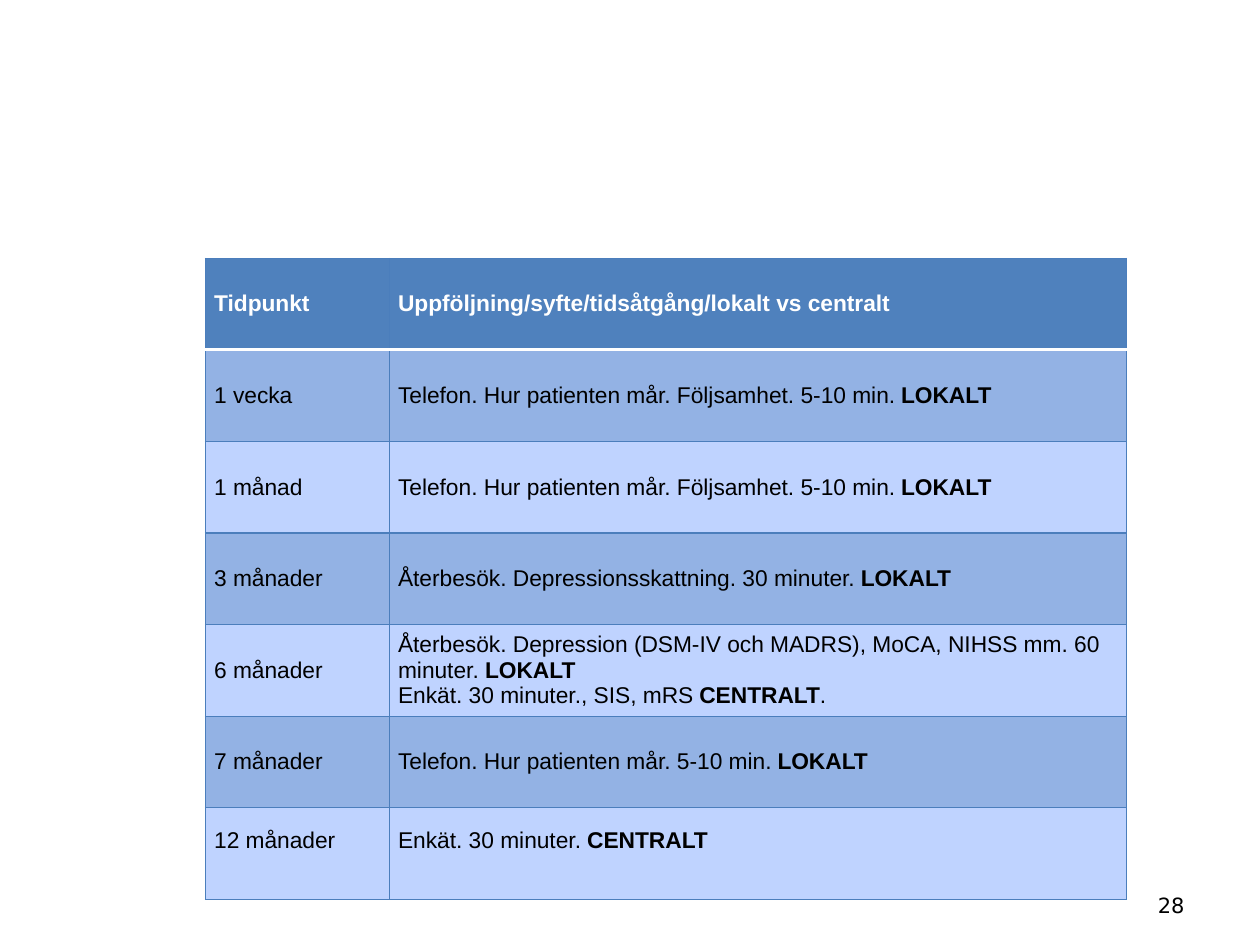
from lxml import etree
from pptx import Presentation
from pptx.dml.color import RGBColor
from pptx.enum.text import MSO_ANCHOR, PP_ALIGN
from pptx.oxml.ns import qn
from pptx.util import Inches, Pt

MIDDLE, BOTTOM = MSO_ANCHOR.MIDDLE, MSO_ANCHOR.BOTTOM
RIGHT = PP_ALIGN.RIGHT
BLANK_LAYOUT = 6

COLORS = {
    "header": "4F81BD",
    "dark": "93B2E4",
    "light": "BFD3FF",
    "border": "4B7EBC",
    "white": "FFFFFF",
    "black": "000000",
}

# Text between asterisks is bold; a newline is a line break in the cell.
ROWS = [
    ("*Tidpunkt*", "*Uppföljning/syfte/tidsåtgång/lokalt vs centralt*"),
    ("1 vecka", "Telefon. Hur patienten mår. Följsamhet. 5-10 min. *LOKALT*"),
    ("1 månad", "Telefon. Hur patienten mår. Följsamhet. 5-10 min. *LOKALT*"),
    ("3 månader", "Återbesök. Depressionsskattning. 30 minuter. *LOKALT*"),
    ("6 månader", "Återbesök. Depression (DSM-IV och MADRS), MoCA, NIHSS mm. "
                  "60 minuter. *LOKALT*\n"
                  "Enkät. 30 minuter., SIS, mRS *CENTRALT*."),
    ("7 månader", "Telefon. Hur patienten mår. 5-10 min. *LOKALT*"),
    ("12 månader", "Enkät. 30 minuter. *CENTRALT*"),
]
COLUMN_WIDTHS = [1.46, 5.85]
TABLE_HEIGHT = 5.09
CELL_FORMAT = {
    "vertical_anchor": MIDDLE,
    "margin_left": Inches(0.07),
    "margin_right": Inches(0.07),
    "margin_top": Inches(0.04),
    "margin_bottom": Inches(0.04),
}


def add_border(cell, side, color, width):
    """Draw one side (L, R, T or B) of a cell; call in that order, before the fill."""
    line = etree.SubElement(cell._tc.get_or_add_tcPr(), qn(f"a:ln{side}"), w=str(Pt(width)))
    fill = etree.SubElement(line, qn("a:solidFill"))
    etree.SubElement(fill, qn("a:srgbClr"), val=color)


def add_text(paragraph, text, font_name, size, color):
    """Add runs, bold between asterisks, with line breaks at newlines."""
    for line_index, line in enumerate(text.split("\n")):
        if line_index:
            paragraph.add_line_break()
        for part_index, part in enumerate(line.split("*")):
            if part:
                run = paragraph.add_run()
                run.text = part
                run.font.name = font_name
                run.font.size = Pt(size)
                run.font.bold = part_index % 2 == 1
                run.font.color.rgb = RGBColor.from_string(color)


presentation = Presentation()
presentation.slide_width = Inches(10)
presentation.slide_height = Inches(7.5)
slide = presentation.slides.add_slide(presentation.slide_layouts[BLANK_LAYOUT])

# Follow-up table
table = slide.shapes.add_table(
    len(ROWS), len(COLUMN_WIDTHS), Inches(1.63), Inches(2.05),
    Inches(sum(COLUMN_WIDTHS)), Inches(TABLE_HEIGHT)).table
for column, width in zip(table.columns, COLUMN_WIDTHS):
    column.width = Inches(width)

for row_index, texts in enumerate(ROWS):
    table.rows[row_index].height = Inches(TABLE_HEIGHT / len(ROWS))
    is_header = row_index == 0
    band = "header" if is_header else "dark" if row_index % 2 else "light"
    for column_index, text in enumerate(texts):
        cell = table.cell(row_index, column_index)
        for name, value in CELL_FORMAT.items():
            setattr(cell, name, value)
        for side in "LRTB":
            under_header = (row_index, side) in [(0, "B"), (1, "T")]
            add_border(cell, side, COLORS["white" if under_header else "border"],
                       2 if under_header else 0.75)
        cell.fill.solid()
        cell.fill.fore_color.rgb = RGBColor.from_string(COLORS[band])
        add_text(cell.text_frame.paragraphs[0], text, "Arial", 13,
                 COLORS["white" if is_header else "black"])

# The last row sits one half line above the middle
for cell in table.rows[len(ROWS) - 1].cells:
    cell.margin_bottom = Inches(0.25)

# Slide number
number_box = slide.shapes.add_textbox(Inches(7.17), Inches(6.83), Inches(2.33), Inches(0.5))
number_frame = number_box.text_frame
number_frame.word_wrap = True
number_frame.vertical_anchor = BOTTOM
number_frame.paragraphs[0].alignment = RIGHT
add_text(number_frame.paragraphs[0], "28", "DejaVu Sans", 12, COLORS["black"])

presentation.save("out.pptx")
